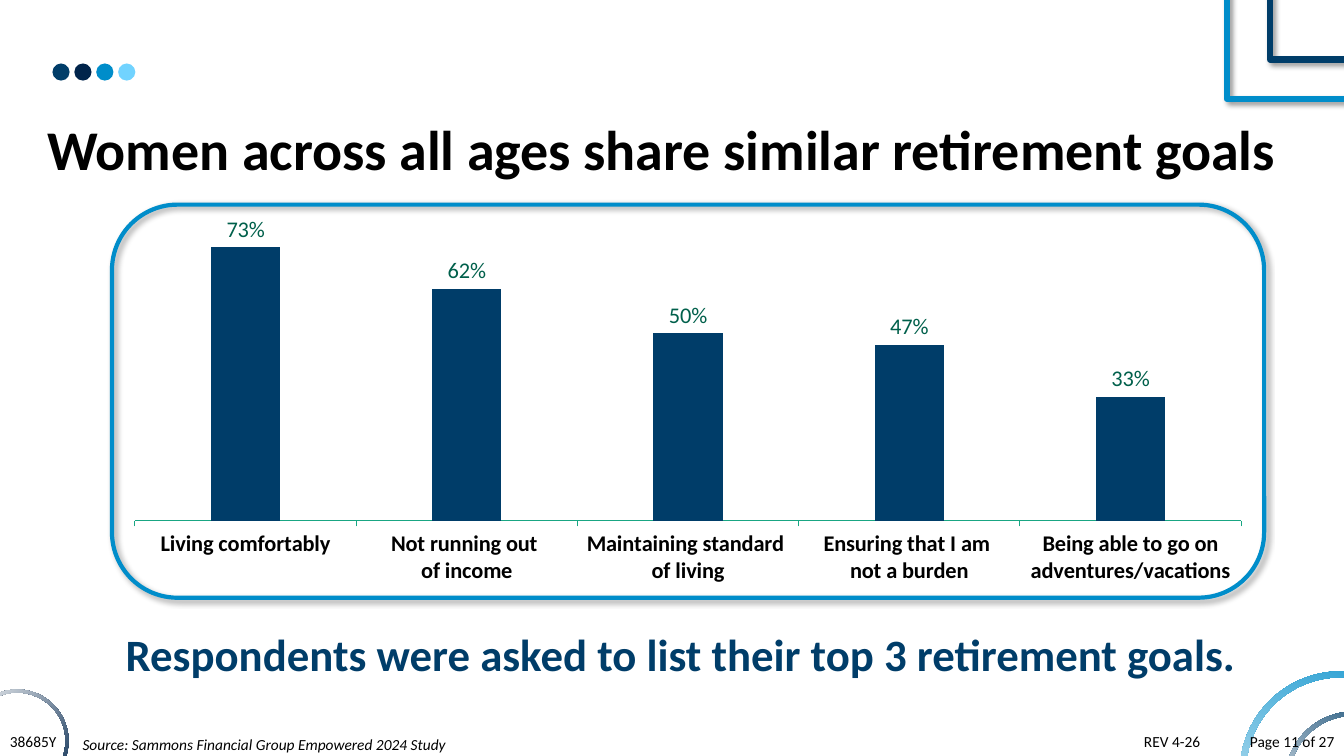
from lxml import etree
from pptx import Presentation
from pptx.chart.data import CategoryChartData
from pptx.dml.color import RGBColor
from pptx.enum.chart import XL_CHART_TYPE, XL_LABEL_POSITION, XL_TICK_LABEL_POSITION, XL_TICK_MARK
from pptx.enum.shapes import MSO_SHAPE
from pptx.enum.text import PP_ALIGN
from pptx.oxml import parse_xml
from pptx.util import Inches, Pt

RECTANGLE, ROUNDED = MSO_SHAPE.RECTANGLE, MSO_SHAPE.ROUNDED_RECTANGLE
ARC, OVAL = MSO_SHAPE.BLOCK_ARC, MSO_SHAPE.OVAL
COLUMNS = XL_CHART_TYPE.COLUMN_CLUSTERED
ABOVE_BAR = XL_LABEL_POSITION.OUTSIDE_END
LABELS_LOW = XL_TICK_LABEL_POSITION.LOW
TICK_OUT, TICK_NONE = XL_TICK_MARK.OUTSIDE, XL_TICK_MARK.NONE
LEFT, CENTER, RIGHT = PP_ALIGN.LEFT, PP_ALIGN.CENTER, PP_ALIGN.RIGHT

FONT = "Calibri"
HEX = {
    "black": "000000", "white": "FFFFFF", "navy": "003D69", "midnight": "00244B",
    "blue": "008DCA", "sky": "71D3FF", "green": "00604B", "mint": "19A683",
}
COLOR = {name: RGBColor.from_string(value) for name, value in HEX.items()}
SHADOW = (
    '<a:effectLst xmlns:a="http://schemas.openxmlformats.org/drawingml/2006/main">'
    '<a:outerShdw blurRad="50800" dist="38100" dir="2700000" algn="tl" rotWithShape="0">'
    '<a:srgbClr val="000000"><a:alpha val="40000"/></a:srgbClr>'
    '</a:outerShdw></a:effectLst>'
)

deck = Presentation()
deck.slide_width, deck.slide_height = Inches(13.333), Inches(7.5)
page = deck.slides.add_slide(deck.slide_layouts[6])


def place(left, top, width, height):
    """Turn percentages of the slide's width and height into lengths."""
    across, down = deck.slide_width / 100, deck.slide_height / 100
    return [round(n) for n in (left * across, top * down, width * across, height * down)]


def add_text(area, text, size, color="black", bold=False, italic=False, align=LEFT, spacing=1.0):
    box = page.shapes.add_textbox(*place(*area))
    box.text_frame.word_wrap = True
    para = box.text_frame.paragraphs[0]
    para.alignment, para.line_spacing = align, spacing
    span = para.add_run()
    span.text = text
    font = span.font
    font.name, font.size, font.bold, font.italic = FONT, Pt(size), bold, italic
    font.color.rgb = COLOR[color]


# Headline
add_text((2.78, 14.53, 97.2, 10.27), "Women across all ages share similar retirement goals", 40, bold=True)

# Chart of goals
goals = CategoryChartData(number_format="0%")
goals.categories = [
    "Living comfortably",
    "Not running out \nof income",
    "Maintaining standard \nof living",
    "Ensuring that I am \nnot a burden",
    "Being able to go on adventures/vacations",
]
goals.add_series("Series 1", (0.73, 0.62, 0.5, 0.47, 0.33))
chart = page.shapes.add_chart(COLUMNS, *place(8.33, 28.27, 85.73, 50.13), goals).chart
chart.has_legend = chart.has_title = False
chart.font.name, chart.font.size = FONT, Pt(10)
chart.font.color.rgb = COLOR["black"]

goal_axis, share_axis = chart.category_axis, chart.value_axis
goal_axis.major_tick_mark, goal_axis.minor_tick_mark = TICK_OUT, TICK_NONE
goal_axis.tick_label_position = LABELS_LOW
goal_font = goal_axis.tick_labels.font
goal_font.name, goal_font.size, goal_font.bold = FONT, Pt(16), True
goal_font.color.rgb = COLOR["black"]
goal_axis.format.line.width = Pt(0.75)
goal_axis.format.line.color.rgb = COLOR["mint"]
share_axis.minimum_scale, share_axis.maximum_scale = 0, 0.8
share_axis.has_major_gridlines = share_axis.visible = False

plot = chart.plots[0]
plot.gap_width, plot.overlap, plot.vary_by_categories = 219, -27, False
bars = plot.series[0].format.fill
bars.solid()
bars.fore_color.rgb = COLOR["navy"]
plot.has_data_labels = True
labels = plot.data_labels
labels.show_value, labels.position = True, ABOVE_BAR
labels.number_format, labels.number_format_is_linked = "0%", False
labels.font.name, labels.font.size, labels.font.bold = FONT, Pt(16), False
labels.font.color.rgb = COLOR["green"]

# Outlined frames: two in the corner, one around the chart
for kind, area, color, weight in (
    (RECTANGLE, (91.28, -10.93, 13.8, 24), "blue", 4.5),
    (ROUNDED, (8.33, 27.07, 85.73, 52), "blue", 3),
    (RECTANGLE, (94.5, -10.67, 8.4, 18.53), "navy", 4.5),
):
    frame = page.shapes.add_shape(kind, *place(*area))
    frame.fill.background()
    frame.line.color.rgb, frame.line.width = COLOR[color], Pt(weight)
    if kind == RECTANGLE:
        etree.SubElement(frame.line._get_or_add_ln(), "{http://schemas.openxmlformats.org/drawingml/2006/main}round")
    frame._element.spPr.append(parse_xml(SHADOW))

# Fading rings in the bottom corners
for area, turn, color in (
    ((-2.55, 91.2, 7.65, 13.6), 176.2, "midnight"),
    ((92.25, 88.8, 15, 26.67), 68.6, "blue"),
    ((95.63, 94.13, 10.13, 18), 85.9, "navy"),
):
    ring = page.shapes.add_shape(ARC, *place(*area))
    ring.rotation = turn
    for index, value in enumerate((212.7, 172.9, 0.03)):
        ring.adjustments[index] = value
    ring.fill.gradient()
    ring.fill.gradient_angle = 315
    for stop, position, shade in zip(ring.fill.gradient_stops, (0.01, 1), (color, "white")):
        stop.position, stop.color.rgb = position, COLOR[shade]
    ring.line.fill.background()
    ring.shadow.inherit = False

# Row of dots
for column, color in enumerate(("navy", "midnight", "blue", "sky")):
    dot = page.shapes.add_shape(OVAL, *place(3.9 + 1.63 * column, 8.4, 1.28, 2.27))
    dot.fill.solid()
    dot.fill.fore_color.rgb = COLOR[color]
    dot.line.fill.background()
    dot.shadow.inherit = False

# Takeaway and footer
add_text((0.68, 81.73, 99.98, 8.67), "Respondents were asked to list their top 3 retirement goals.", 32,
         "navy", bold=True, align=CENTER, spacing=1.07)
add_text((5.4, 96.4, 52.28, 3.87), "Source: Sammons Financial Group Empowered 2024 Study", 11,
         italic=True, spacing=1.07)
add_text((0, 96.13, 14.18, 3.87), "38685Y", 11)
add_text((84.38, 96.13, 7.65, 3.87), "REV 4-26", 11)
add_text((92.03, 96.13, 8, 3.87), "Page 11 of 27", 11, align=RIGHT)

deck.save("out.pptx")
